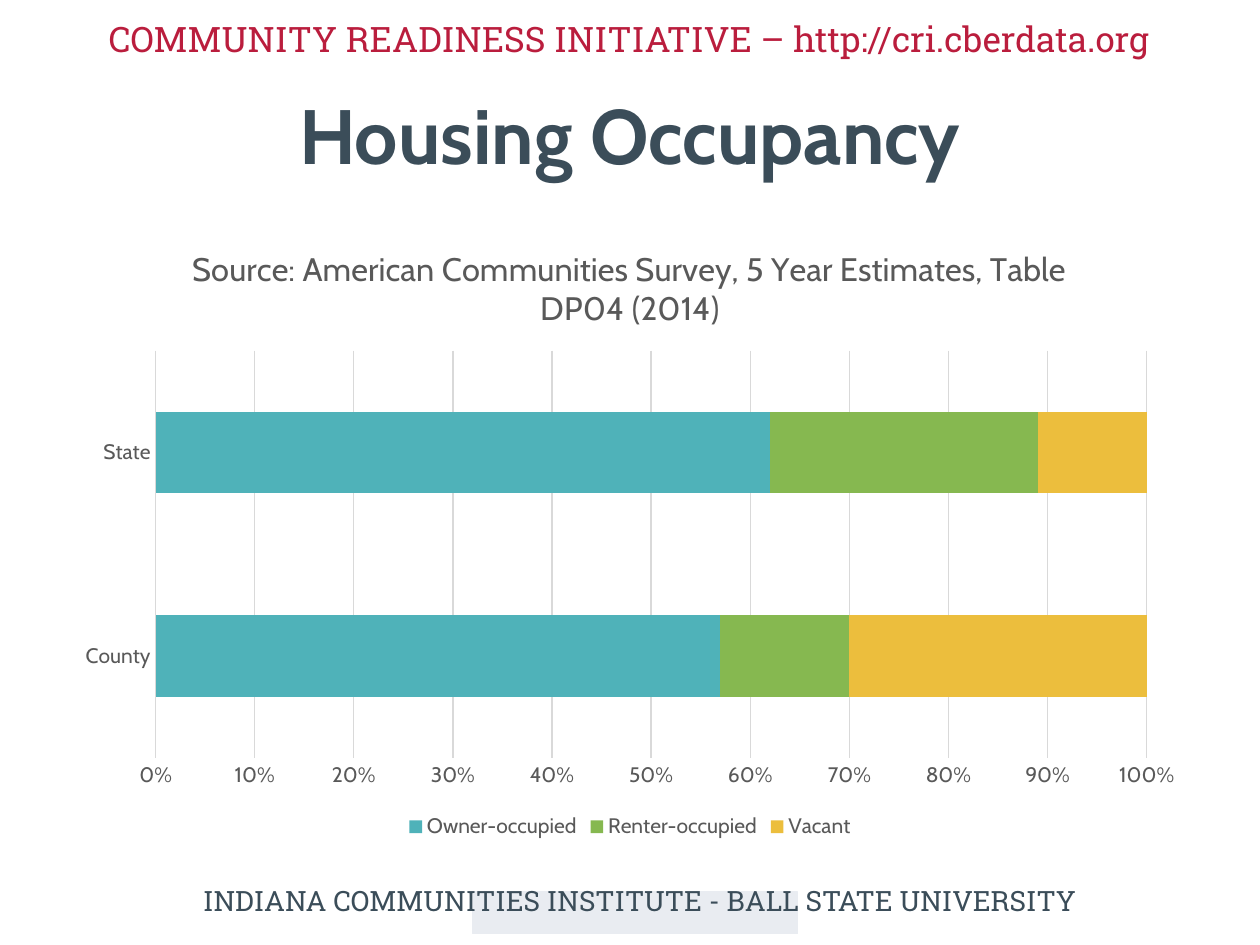
from lxml import etree
from pptx import Presentation
from pptx import util as u
from pptx.chart import data as chart_data
from pptx.dml.color import RGBColor
from pptx.enum import chart as charts, shapes, text

COLORS = {
    "slate": "3B4D59", "red": "BA1D3D", "gray": "595959", "grid": "D9D9D9",
    "pale": "E9ECF1", "white": "FFFFFF",
    "teal": "4FB2B9", "green": "86B850", "gold": "ECBE3D",
}


def color(name):
    return RGBColor.from_string(COLORS[name])


def style_font(font, name, size, color_name, bold=False):
    font.name = name
    font.size = u.Pt(size)
    font.bold = bold
    font.color.rgb = color(color_name)


presentation = Presentation()
presentation.slide_width = u.Cm(25.4)
presentation.slide_height = u.Cm(19.05)
slide = presentation.slides.add_slide(presentation.slide_layouts[6])

# Footer block and header band
for left, top, width, height, fill in [
    (9.53, 17.98, 6.55, 0.84, "pale"),
    (0, 0, 25.4, 1.47, "white"),
]:
    shape = slide.shapes.add_shape(
        shapes.MSO_SHAPE.RECTANGLE, u.Cm(left), u.Cm(top), u.Cm(width), u.Cm(height))
    shape.shadow.inherit = False
    shape.fill.solid()
    shape.fill.fore_color.rgb = color(fill)
    shape.line.color.rgb = color(fill)
    shape.line.width = u.Pt(0.75)

# Footer, header and title text
for left, top, width, height, words, font_name, size, color_name, bold in [
    (1.47, 17.68, 22.86, 0.94, "INDIANA COMMUNITIES INSTITUTE - BALL STATE UNIVERSITY",
     "Roboto Slab", 16, "slate", False),
    (0.2, 0.23, 24.97, 1.12, "COMMUNITY READINESS INITIATIVE – http://cri.cberdata.org",
     "Roboto Slab", 20, "red", False),
    (1.27, 1.47, 22.86, 2.46, "Housing Occupancy", "Cabin", 44, "slate", True),
]:
    box = slide.shapes.add_textbox(u.Cm(left), u.Cm(top), u.Cm(width), u.Cm(height))
    frame = box.text_frame
    frame.word_wrap = True
    frame.vertical_anchor = text.MSO_ANCHOR.MIDDLE if bold else text.MSO_ANCHOR.TOP
    paragraph = frame.paragraphs[0]
    paragraph.alignment = text.PP_ALIGN.CENTER
    run = paragraph.add_run()
    run.text = words
    style_font(run.font, font_name, size, color_name, bold)

# Occupancy chart
occupancy = chart_data.CategoryChartData()
occupancy.categories = ["County", "State"]
series_rows = [
    ("Owner-occupied", (57, 62), "teal"),
    ("Renter-occupied", (13, 27), "green"),
    ("Vacant", (30, 11), "gold"),
]
for name, values, _ in series_rows:
    occupancy.add_series(name, values)
chart = slide.shapes.add_chart(
    charts.XL_CHART_TYPE.BAR_STACKED_100,
    u.Cm(1.27), u.Cm(4.45), u.Cm(22.86), u.Cm(12.57), occupancy).chart
style_font(chart.font, "Cabin", 12, "gray")

# Bars
plot = chart.plots[0]
plot.gap_width = 150
plot.overlap = 100
plot.vary_by_categories = False
for series, (_, _, fill) in zip(plot.series, series_rows):
    series.format.fill.solid()
    series.format.fill.fore_color.rgb = color(fill)

# Chart title
chart.has_title = True
run = chart.chart_title.text_frame.paragraphs[0].add_run()
run.text = "Source: American Communities Survey, 5 Year Estimates, Table DP04 (2014)"
style_font(run.font, "Cabin", 18.6, "gray")
chart.chart_title.include_in_layout = False

# Axes and gridlines
for axis in (chart.category_axis, chart.value_axis):
    axis.major_tick_mark = charts.XL_TICK_MARK.NONE
    axis.minor_tick_mark = charts.XL_TICK_MARK.NONE
    style_font(axis.tick_labels.font, "Cabin", 12, "gray")
chart.value_axis.has_major_gridlines = True
chart.value_axis.format.line.fill.background()
chart.value_axis.tick_labels.number_format = "0%"
chart.value_axis.tick_labels.number_format_is_linked = False
for lined in (chart.category_axis, chart.value_axis.major_gridlines):
    lined.format.line.color.rgb = color("grid")
    lined.format.line.width = u.Pt(0.75)

# Legend
chart.has_legend = True
chart.legend.position = charts.XL_LEGEND_POSITION.BOTTOM
chart.legend.include_in_layout = False
style_font(chart.legend.font, "Cabin", 12, "gray")

presentation.save("out.pptx")
